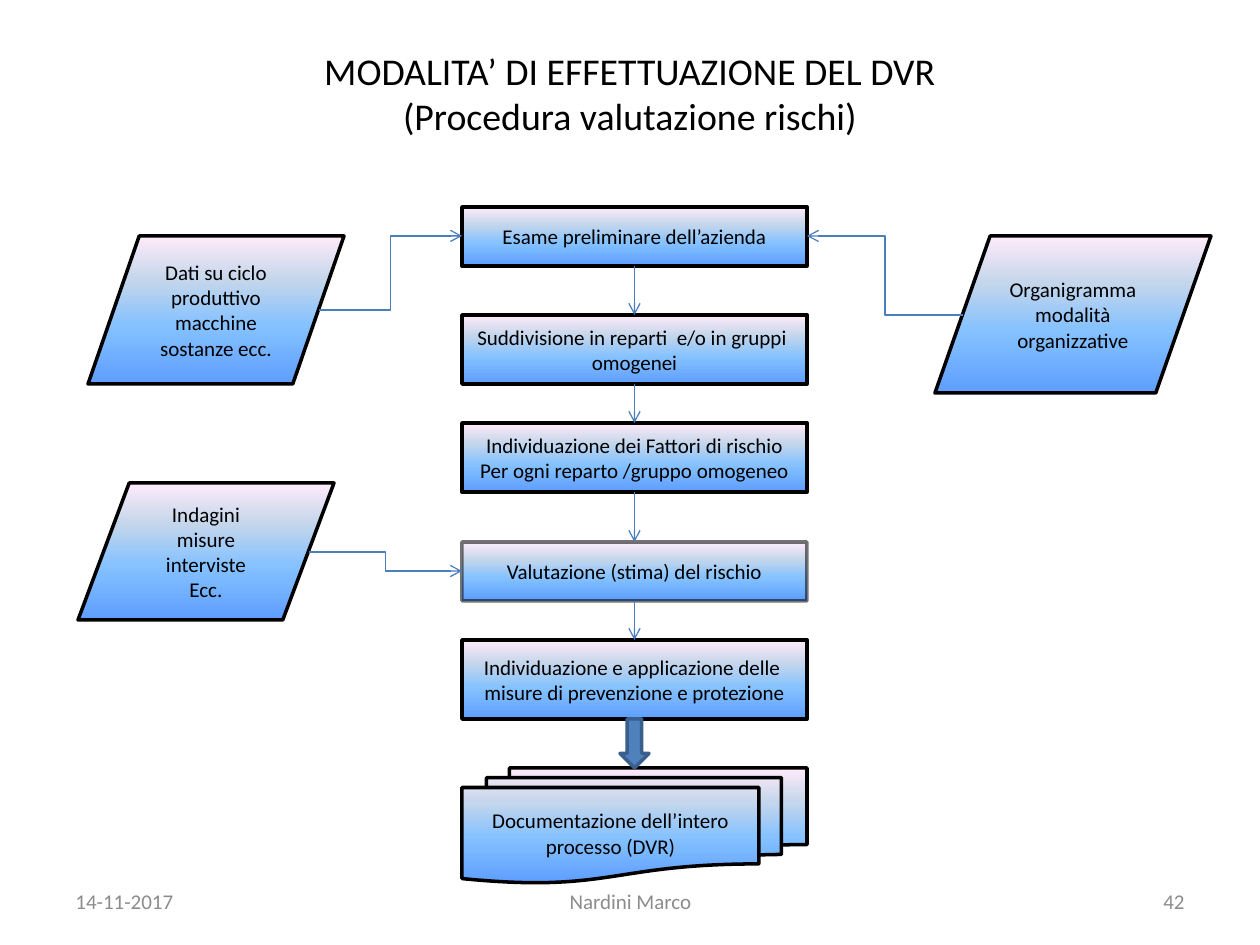
from itertools import pairwise

from lxml import etree
from pptx import Presentation
from pptx import util as u
from pptx.enum import shapes, text
from pptx.dml.color import RGBColor
from pptx.oxml import ns

EMU_PER_PX = 914400 / 126
COLORS = {
    "text": "000000", "footer": "8C8C8C", "outline": "000000",
    "connector": "4B7EBC", "arrow": "4F81BD", "arrow_line": "3A5F8C",
}
GRADIENT = [(0, "5E9EFF"), (40, "85C2FF"), (70, "C4D6EB"), (100, "FFEBFA")]
SHAPE = shapes.MSO_SHAPE
ALIGN = text.PP_ALIGN


def px(*values):
    return [u.Emu(round(v * EMU_PER_PX)) for v in values]


def rgb(name):
    return RGBColor.from_string(COLORS[name])


def add_xml(parent, tag, **attrs):
    return etree.SubElement(parent, ns.qn(tag), attrs)


def write(tf, content, size=12, color="text", align=ALIGN.CENTER):
    """Fill a text frame: \\n starts a paragraph, \\v breaks a line."""
    tf.word_wrap = True
    tf.vertical_anchor = text.MSO_ANCHOR.MIDDLE
    tf.text = content
    for p in tf.paragraphs:
        p.alignment = align
        for r in p.runs:
            r.font.name = "Calibri"
            r.font.size = u.Pt(size)
            r.font.color.rgb = rgb(color)


class Flowchart:
    def __init__(self, slide):
        self.s = slide

    def label(self, box, content, **fmt):
        write(self.s.shapes.add_textbox(*px(*box)).text_frame, content, **fmt)

    def shape(self, kind, box, line):
        sp = self.s.shapes.add_shape(kind, *px(*box))
        sp.shadow.inherit = False
        sp.line.width = u.Pt(2)
        sp.line.color.rgb = rgb(line)
        return sp

    def step(self, kind, box, content, line_alpha=None):
        """Outlined gradient shape with centred text."""
        sp = self.shape(kind, box, "outline")
        sp.fill.gradient()
        sp.fill.gradient_angle = 90
        stops = sp._element.spPr.find(".//" + ns.qn("a:gsLst"))
        for stop in list(stops):
            stops.remove(stop)
        for pos, color in GRADIENT:
            stop = add_xml(stops, "a:gs", pos=str(pos * 1000))
            add_xml(stop, "a:srgbClr", val=color)
        if line_alpha is not None:
            clr = sp.line._ln.find(".//" + ns.qn("a:srgbClr"))
            add_xml(clr, "a:alpha", val=str(line_alpha * 1000))
        write(sp.text_frame, content)
        return sp

    def block_arrow(self, box):
        sp = self.shape(SHAPE.DOWN_ARROW, box, "arrow_line")
        sp.fill.solid()
        sp.fill.fore_color.rgb = rgb("arrow")

    def connector(self, kind, start=(0, 0), end=(0, 0)):
        c = self.s.shapes.add_connector(kind, *px(*start, *end))
        c.line.width = u.Pt(0.75)
        c.line.color.rgb = rgb("connector")
        add_xml(c.line._ln, "a:tailEnd", type="arrow")
        add_xml(c._element.spPr, "a:effectLst")
        return c

    def link(self, upper, lower):
        """Arrow from the bottom of one step to the top of the next."""
        c = self.connector(shapes.MSO_CONNECTOR.STRAIGHT)
        c.begin_connect(upper, 2)
        c.end_connect(lower, 0)


def main():
    prs = Presentation()
    prs.slide_width, prs.slide_height = u.Inches(10), u.Inches(7.5)
    chart = Flowchart(prs.slides.add_slide(prs.slide_layouts[6]))

    chart.label((63, 38, 1134, 110),
                "MODALITA’ DI EFFETTUAZIONE DEL DVR\v(Procedura valutazione rischi)",
                size=21.6)
    for x, w, content, align in [
        (63, 294, "14-11-2017", ALIGN.LEFT),
        (431, 399, "Nardini Marco", ALIGN.CENTER),
        (903, 294, "42", ALIGN.RIGHT),
    ]:
        chart.label((x, 876, w, 50), content, color="footer", align=align)

    left, width = 462, 345
    steps = [
        chart.step(SHAPE.RECTANGLE, (left, y, width, h), content, alpha)
        for y, h, content, alpha in [
            (207, 59, "Esame preliminare dell’azienda", None),
            (315, 69, "Suddivisione in reparti  e/o in gruppi \nomogenei", None),
            (423, 69, "Individuazione dei Fattori di rischio\n"
                      "Per ogni reparto /gruppo omogeneo", None),
            (542, 59, "Valutazione (stima) del rischio", 55),
            (640, 79, "Individuazione e applicazione delle \n"
                      "misure di prevenzione e protezione", None),
        ]
    ]
    chart.step(SHAPE.FLOWCHART_MULTIDOCUMENT, (left, 768, width, 115),
               "Documentazione dell’intero processo (DVR)")

    for box, content, start, end in [
        ((88, 236, 256, 148), "Dati su ciclo produttivo macchine sostanze ecc.",
         (319, 310), (left, 236)),
        ((78, 483, 256, 137), "Indagini misure interviste\nEcc.",
         (309, 552), (left, 571)),
        ((935, 236, 276, 157), "Organigramma modalità organizzative",
         (963, 315), (left + width, 236)),
    ]:
        chart.step(SHAPE.FLOWCHART_DATA, box, content)
        chart.connector(shapes.MSO_CONNECTOR.ELBOW, start, end)

    for upper, lower in pairwise(steps):
        chart.link(upper, lower)
    chart.block_arrow((620, 719, 29, 49))

    prs.save("out.pptx")


if __name__ == "__main__":
    main()
